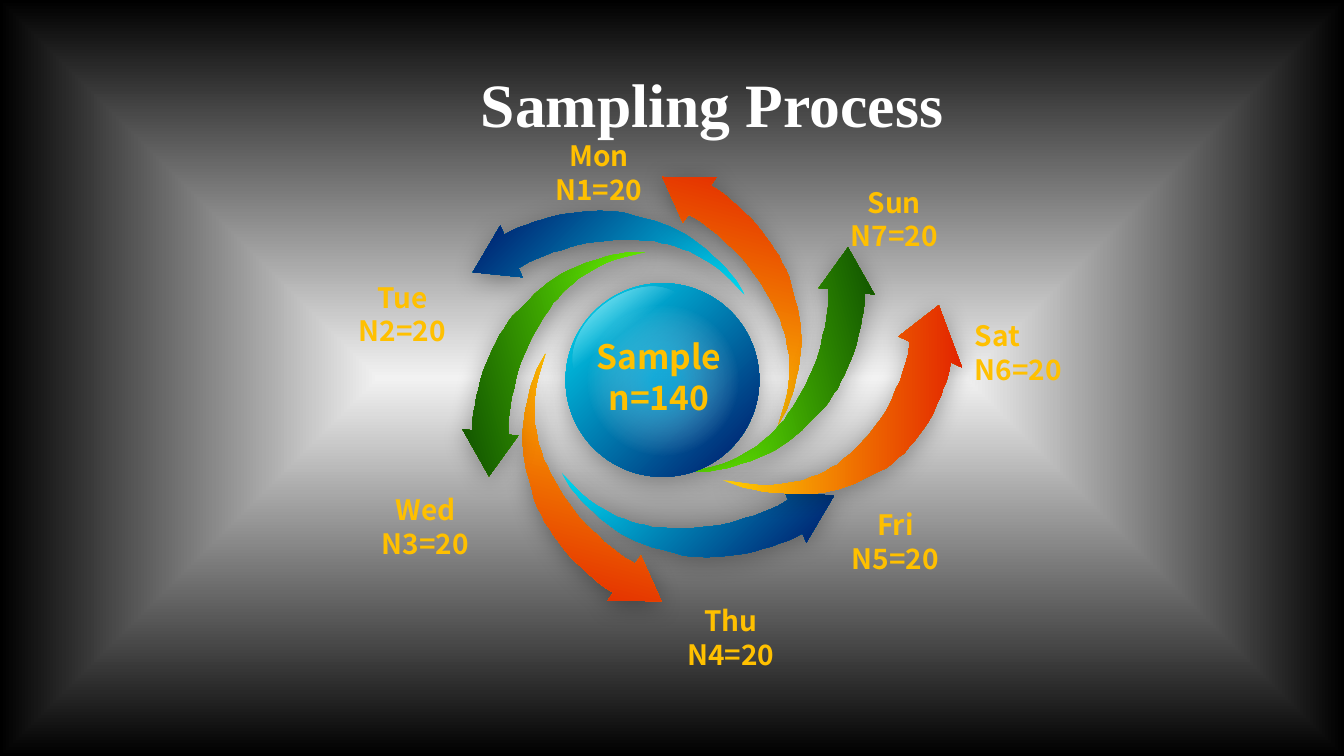
from dataclasses import dataclass

from lxml.etree import SubElement
from pptx import Presentation
from pptx.dml.color import RGBColor
from pptx.enum.shapes import MSO_SHAPE
from pptx.enum.text import MSO_ANCHOR, MSO_AUTO_SIZE, PP_ALIGN
from pptx.oxml import parse_xml
from pptx.oxml.ns import nsdecls, qn
from pptx.util import Inches, Pt

WHITE = RGBColor(0xFF, 0xFF, 0xFF)
BLACK = RGBColor(0x00, 0x00, 0x00)
PALE_GREY = RGBColor(0xF2, 0xF2, 0xF2)
GOLD = RGBColor(0xFF, 0xC0, 0x00)
GLOW = RGBColor(0x2D, 0xD7, 0xFF)
BLUES = (RGBColor(0x00, 0xDF, 0xF6), RGBColor(0x00, 0x27, 0x74))
ORANGES = (RGBColor(0xFF, 0xCF, 0x01), RGBColor(0xE2, 0x20, 0x00))
GREENS = (RGBColor(0x6E, 0xFF, 0x01), RGBColor(0x0F, 0x50, 0x00))

LABEL_FONT = "Noto Sans CJK SC"
TITLE_FONT = "Times New Roman"

ARROW_OUTLINE = (
    (224, 27), (220, 18), (269, 23), (242, 69), (238, 60), (231, 64), (222, 68),
    (215, 70), (208, 73), (200, 75), (191, 78), (182, 80), (175, 81), (166, 82),
    (158, 83), (152, 83), (143, 84), (137, 83), (128, 83), (120, 82), (110, 79),
    (99, 76), (90, 74), (82, 71), (74, 68), (68, 65), (60, 61), (54, 57),
    (46, 51), (38, 45), (32, 39), (24, 32), (19, 27), (16, 23), (9, 15),
    (0, 0), (14, 15), (21, 22), (27, 27), (34, 32), (41, 36), (48, 40),
    (55, 44), (62, 46), (69, 49), (76, 51), (83, 52), (89, 54), (97, 54),
    (105, 55), (112, 55), (120, 55), (130, 55), (139, 54), (149, 53), (157, 52),
    (166, 50), (173, 48), (181, 45), (190, 43), (197, 40), (207, 36), (214, 33),
)


@dataclass(frozen=True)
class Stop:
    position: int
    color: RGBColor
    opacity: int = 100


@dataclass(frozen=True)
class Arrow:
    left: float
    top: float
    rotation: float
    colors: tuple[RGBColor, RGBColor]
    width: float = 2.7
    height: float = 0.84


@dataclass(frozen=True)
class DayLabel:
    day: str
    number: int
    left: float
    top: float
    width: float = 1.14
    wrap: bool = False
    align: PP_ALIGN = PP_ALIGN.CENTER


RING_ARROWS = (
    Arrow(5.57, 4.69, 0, BLUES),
    Arrow(4.37, 4.47, 60, ORANGES),
    Arrow(4.01, 3.04, 120, GREENS),
    Arrow(4.69, 2.09, 180, BLUES),
    Arrow(6.06, 2.41, 240, ORANGES),
    Arrow(6.55, 3.3, 300, GREENS),
)
SATURDAY_ARROW = Arrow(7.15, 3.63, 314.8, ORANGES, 2.74, 1.09)

DAY_LABELS = (
    DayLabel("Fri", 5, 8.31, 4.99),
    DayLabel("Sun", 7, 8.3, 1.79),
    DayLabel("Tue", 2, 3.42, 2.73),
    DayLabel("Wed", 3, 3.65, 4.84),
    DayLabel("Thu", 4, 6.51, 5.94, width=1.48, wrap=True),
    DayLabel("Mon", 1, 5.37, 1.33),
    DayLabel("Sat", 6, 9.57, 3.11, align=PP_ALIGN.LEFT),
)


def set_gradient(properties, stops, angle: int = 0, path: str = "") -> None:
    stop_xml = "".join(
        f'<a:gs pos="{stop.position * 1000}"><a:srgbClr val="{stop.color}">'
        f'<a:alpha val="{stop.opacity * 1000}"/></a:srgbClr></a:gs>'
        for stop in stops
    )
    direction = f'<a:lin ang="{angle * 60000}" scaled="0"/>'
    if path:
        direction = (f'<a:path path="{path}"><a:fillToRect l="50000" t="50000" '
                     f'r="50000" b="50000"/></a:path>')
    gradient = parse_xml(f'<a:gradFill {nsdecls("a")} rotWithShape="1">'
                         f'<a:gsLst>{stop_xml}</a:gsLst>{direction}</a:gradFill>')
    properties.replace(properties.find(qn("a:noFill")), gradient)


def add_shadow(effects, blur: float, distance: float, angle: int, opacity: int) -> None:
    shadow = SubElement(effects, qn("a:outerShdw"), blurRad=str(Pt(blur)),
                        dist=str(Pt(distance)), dir=str(angle * 60000),
                        algn="ctr", rotWithShape="0")
    color = SubElement(shadow, qn("a:srgbClr"), val=str(BLACK))
    SubElement(color, qn("a:alpha"), val=str(opacity * 1000))


def format_shape(shape, stops, angle: int = 0, path: str = "", shadow: bool = False) -> None:
    shape.fill.background()
    shape.line.fill.background()
    shape.shadow.inherit = False
    properties = shape._element.spPr
    set_gradient(properties, stops, angle, path)
    if shadow:
        add_shadow(properties.find(qn("a:effectLst")), 17.8, 3, 87, 33)


def two_tone(colors: tuple[RGBColor, RGBColor]) -> tuple[Stop, Stop]:
    return Stop(0, colors[0]), Stop(90, colors[1])


def add_arrow(shapes, arrow: Arrow) -> None:
    builder = shapes.build_freeform(*ARROW_OUTLINE[0], scale=Inches(0.01))
    builder.add_line_segments(ARROW_OUTLINE[1:], close=True)
    shape = builder.convert_to_shape()
    shape.left, shape.top = Inches(arrow.left), Inches(arrow.top)
    shape.width, shape.height = Inches(arrow.width), Inches(arrow.height)
    shape.rotation = arrow.rotation
    format_shape(shape, two_tone(arrow.colors), angle=45, shadow=True)


def add_ellipse(shapes, left: float, top: float, width: float, height: float,
                stops, rotation: float = 0, **gradient) -> None:
    shape = shapes.add_shape(MSO_SHAPE.OVAL, Inches(left), Inches(top),
                             Inches(width), Inches(height))
    shape.rotation = rotation
    format_shape(shape, stops, **gradient)


def add_text(shapes, text: str, left: float, top: float, width: float, height: float, *,
             size: int = 20, font: str = LABEL_FONT, color: RGBColor = GOLD,
             align: PP_ALIGN = PP_ALIGN.CENTER, anchor: MSO_ANCHOR = MSO_ANCHOR.TOP,
             wrap: bool = True, grow: bool = True, shadow: bool = False) -> None:
    box = shapes.add_textbox(Inches(left), Inches(top), Inches(width), Inches(height))
    frame = box.text_frame
    frame.word_wrap = wrap
    frame.vertical_anchor = anchor
    frame.auto_size = MSO_AUTO_SIZE.SHAPE_TO_FIT_TEXT if grow else MSO_AUTO_SIZE.NONE
    frame.text = text
    for paragraph in frame.paragraphs:
        paragraph.alignment = align
        for run in paragraph.runs:
            run.font.size = Pt(size)
            run.font.bold = True
            run.font.name = font
            run.font.color.rgb = color
            if shadow:
                effects = parse_xml(f'<a:effectLst {nsdecls("a")}/>')
                add_shadow(effects, 3, 3, 45, 60)
                run.font._element.find(qn("a:solidFill")).addnext(effects)


def add_sample_sphere(slide) -> None:
    shapes = slide.shapes.add_group_shape().shapes
    add_ellipse(shapes, 5.61, 2.81, 1.92, 1.92, two_tone(BLUES), angle=45, shadow=True)
    add_ellipse(shapes, 5.61, 2.93, 1.3, 0.89, (Stop(0, WHITE), Stop(45, WHITE, 0)),
                rotation=323.1, angle=90)
    add_ellipse(shapes, 5.82, 3.02, 1.51, 1.51, (Stop(10, GLOW, 50), Stop(70, WHITE, 0)),
                path="circle")
    add_text(shapes, "Sample\nn=140", 5.34, 3.28, 2.39, 0.91, size=24,
             anchor=MSO_ANCHOR.MIDDLE)


def main() -> None:
    presentation = Presentation()
    presentation.slide_width = Inches(13.33)
    presentation.slide_height = Inches(7.5)
    slide = presentation.slides.add_slide(presentation.slide_layouts[6])
    slide.background.fill.background()
    set_gradient(slide._element.cSld.find(f'{qn("p:bg")}/{qn("p:bgPr")}'),
                 (Stop(0, PALE_GREY), Stop(100, BLACK)), path="shape")
    add_text(slide.shapes, "Sampling Process", 2.56, 0.54, 9.01, 0.97, size=44,
             font=TITLE_FONT, color=WHITE, anchor=MSO_ANCHOR.MIDDLE, grow=False, shadow=True)
    for arrow in RING_ARROWS:
        add_arrow(slide.shapes, arrow)
    add_sample_sphere(slide)
    add_arrow(slide.shapes, SATURDAY_ARROW)
    for label in DAY_LABELS:
        add_text(slide.shapes, f"{label.day}\nN{label.number}=20", label.left, label.top,
                 label.width, 0.77, align=label.align, wrap=label.wrap)
    presentation.save("out.pptx")


if __name__ == "__main__":
    main()
